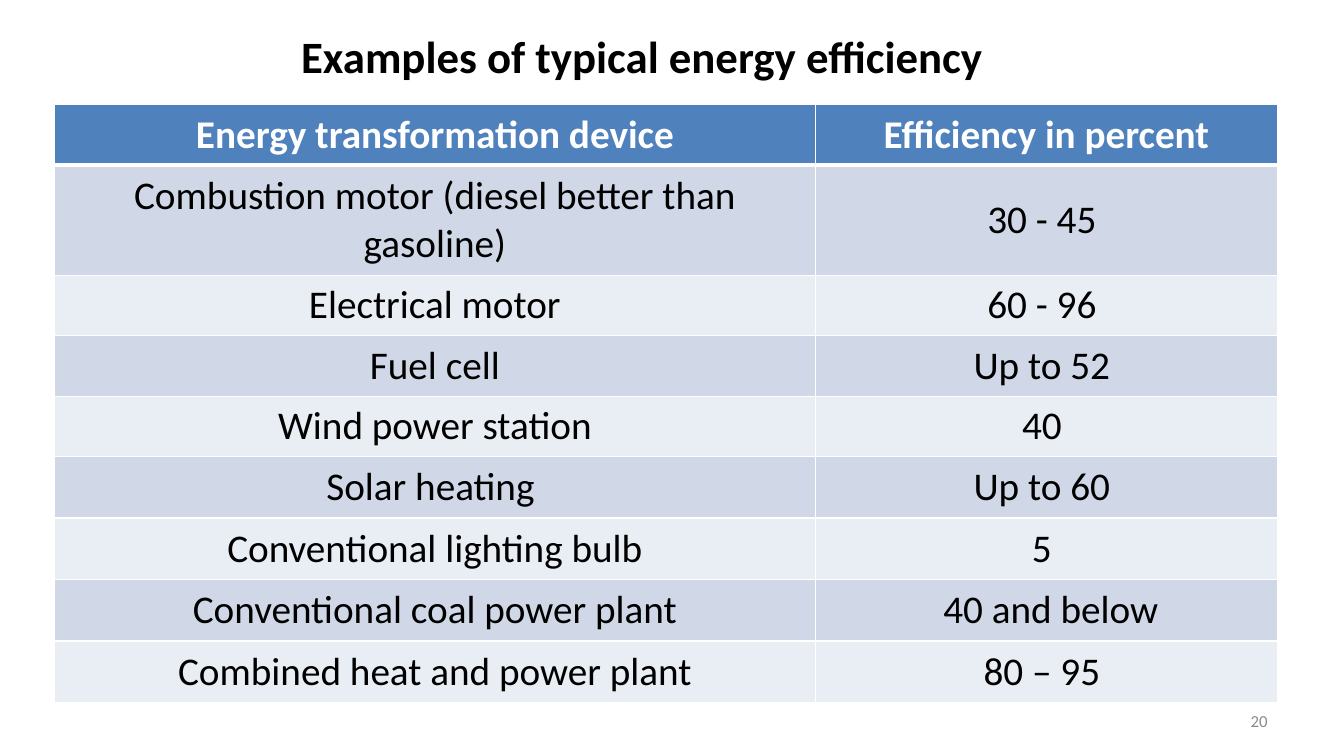
from dataclasses import dataclass

from lxml import etree
from pptx import Presentation
from pptx.dml.color import RGBColor
from pptx.enum.text import MSO_ANCHOR, PP_ALIGN
from pptx.oxml.ns import qn
from pptx.util import Inches, Pt

CENTER, RIGHT = PP_ALIGN.CENTER, PP_ALIGN.RIGHT
MIDDLE = MSO_ANCHOR.MIDDLE


@dataclass(frozen=True)
class Theme:
    """Colours, font and sizes of the slide."""
    font: str = "Calibri"
    ink: str = "000000"
    light: str = "FFFFFF"
    muted: str = "8C8C8C"
    header: str = "4F81BD"
    bands: tuple = ("D0D8E8", "E9EDF4")
    title_size: int = 32
    table_size: int = 28
    number_size: int = 12
    rule: int = 1
    header_rule: int = 3


THEME = Theme()
PAGE_SIZE = (13.33, 7.5)
TITLE_BOX = (1.69, 0.36, 9.46, 0.38)
TABLE_BOX = (0.54, 1.04, 12.13, 5.93)
NUMBER_BOX = (9.56, 6.95, 3.11, 0.4)
COLUMN_SHARES = (0.622, 0.378)
ROW_HEIGHTS = (0.6, 1.09, 0.6, 0.6, 0.6, 0.61, 0.61, 0.61, 0.61)
EFFICIENCIES = (
    ("Energy transformation device", "Efficiency in percent"),
    ("Combustion motor (diesel better than gasoline)", "30 - 45 "),
    ("Electrical motor", "60 - 96 "),
    ("Fuel cell", "Up to 52 "),
    ("Wind power station", "40 "),
    ("Solar heating ", "Up to 60 "),
    ("Conventional lighting bulb", "5 "),
    ("Conventional coal power plant", " 40 and below"),
    ("Combined heat and power plant", "80 – 95 "),
)


def write_text(frame, text, size, color=THEME.ink, bold=False, align=CENTER):
    """Write one formatted paragraph into a text frame."""
    frame.word_wrap = True
    para = frame.paragraphs[0]
    para.alignment = align
    span = para.add_run()
    span.text = text
    span.font.name = THEME.font
    span.font.size = Pt(size)
    span.font.bold = bold
    span.font.color.rgb = RGBColor.from_string(color)


def add_label(page, box, text, **text_format):
    """Place a vertically centred line of text in a box."""
    frame = page.shapes.add_textbox(*map(Inches, box)).text_frame
    frame.vertical_anchor = MIDDLE
    write_text(frame, text, **text_format)


def set_borders(cell, top, bottom):
    """Draw the four cell borders, with top and bottom widths in points."""
    properties = cell._tc.get_or_add_tcPr()
    widths = {"lnL": THEME.rule, "lnR": THEME.rule, "lnT": top, "lnB": bottom}
    for position, (side, width) in enumerate(widths.items()):
        line = etree.Element(qn(f"a:{side}"), w=str(Pt(width)))
        fill = etree.SubElement(line, qn("a:solidFill"))
        etree.SubElement(fill, qn("a:srgbClr"), val=THEME.light)
        properties.insert(position, line)


def add_efficiency_table(page, box, rows):
    """Place the table with a header row and alternating bands."""
    table = page.shapes.add_table(
        len(rows), len(COLUMN_SHARES), *map(Inches, box)).table
    for column, share in zip(table.columns, COLUMN_SHARES):
        column.width = Inches(box[2] * share)
    for index, (row, height, texts) in enumerate(
            zip(table.rows, ROW_HEIGHTS, rows)):
        row.height = Inches(height)
        is_header = index == 0
        fill = THEME.header if is_header else THEME.bands[(index - 1) % 2]
        for cell, text in zip(row.cells, texts):
            cell.vertical_anchor = MIDDLE
            cell.fill.solid()
            cell.fill.fore_color.rgb = RGBColor.from_string(fill)
            set_borders(
                cell,
                top=THEME.header_rule if index == 1 else THEME.rule,
                bottom=THEME.header_rule if is_header else THEME.rule)
            write_text(cell.text_frame, text, THEME.table_size,
                       color=THEME.light if is_header else THEME.ink,
                       bold=is_header)


def build_efficiency_slide(deck):
    """Add the slide with its title, table and page number."""
    page = deck.slides.add_slide(deck.slide_layouts[6])
    add_label(page, TITLE_BOX, "Examples of typical energy efficiency ",
              size=THEME.title_size, bold=True)
    add_label(page, NUMBER_BOX, "20", size=THEME.number_size,
              color=THEME.muted, align=RIGHT)
    add_efficiency_table(page, TABLE_BOX, EFFICIENCIES)


def main():
    """Build and save the deck."""
    deck = Presentation()
    deck.slide_width, deck.slide_height = map(Inches, PAGE_SIZE)
    build_efficiency_slide(deck)
    deck.save("out.pptx")


if __name__ == "__main__":
    main()
